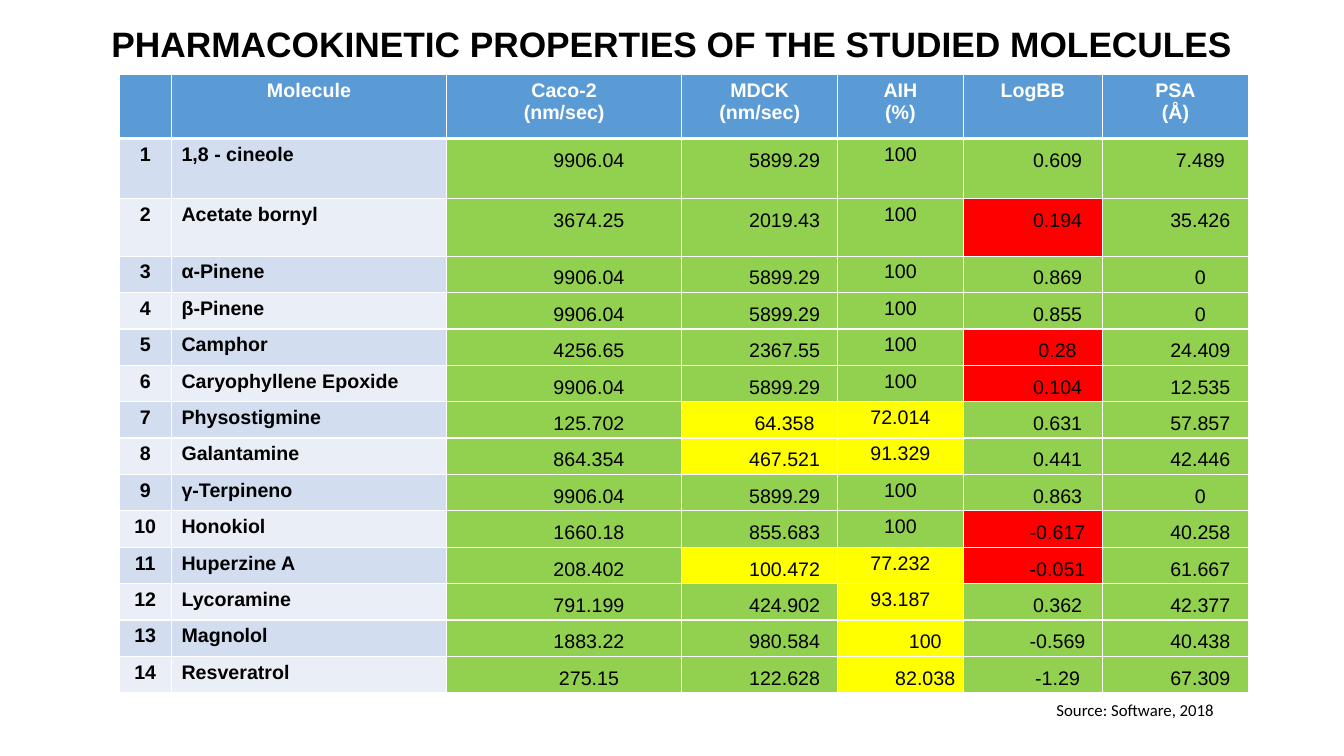
import dataclasses
import itertools

import pptx
import pptx.dml.color
import pptx.enum.text
import pptx.oxml
import pptx.oxml.ns
import pptx.util

ALIGN = pptx.enum.text.PP_ALIGN
PX = pptx.util.Inches(1) // 144


@dataclasses.dataclass(frozen=True)
class Theme:
    font: str = "Arial"
    source_font: str = "Calibri"
    title_size: float = 25.2
    table_size: float = 14
    source_size: float = 12
    ink: str = "000000"
    white: str = "FFFFFF"
    header: str = "5B9BD5"
    bands: tuple = ("D2DEEF", "EAEFF7")
    good: str = "92D050"
    fair: str = "FFFF00"
    poor: str = "FF0000"


THEME = Theme()

COLUMN_WIDTHS = [75, 393, 336, 223, 179, 199, 209]
ROW_HEIGHTS = [91, 86, 82] + [52] * 12
HEADERS = ["", "Molecule", "Caco-2\n(nm/sec)", "MDCK\n(nm/sec)", "AIH\n(%)", "LogBB", "PSA\n(Å)"]
MDCK, AIH, LOGBB = 3, 4, 5
MOLECULES = [
    ("1,8 - cineole", "9906.04", "5899.29", "100", "0.609", "7.489"),
    ("Acetate bornyl", "3674.25", "2019.43", "100", "0.194", "35.426"),
    ("α-Pinene", "9906.04", "5899.29", "100", "0.869", "0"),
    ("β-Pinene", "9906.04", "5899.29", "100", "0.855", "0"),
    ("Camphor", "4256.65", "2367.55", "100", "0.28", "24.409"),
    ("Caryophyllene Epoxide", "9906.04", "5899.29", "100", "0.104", "12.535"),
    ("Physostigmine", "125.702", "64.358", "72.014", "0.631", "57.857"),
    ("Galantamine", "864.354", "467.521", "91.329", "0.441", "42.446"),
    ("γ-Terpineno", "9906.04", "5899.29", "100", "0.863", "0"),
    ("Honokiol", "1660.18", "855.683", "100", "-0.617", "40.258"),
    ("Huperzine A", "208.402", "100.472", "77.232", "-0.051", "61.667"),
    ("Lycoramine", "791.199", "424.902", "93.187", "0.362", "42.377"),
    ("Magnolol", "1883.22", "980.584", "100", "-0.569", "40.438"),
    ("Resveratrol", "275.15", "122.628", "82.038", "-1.29", "67.309"),
]
HIGHLIGHTS = {
    MDCK: (THEME.fair, {7, 8, 11}),
    AIH: (THEME.fair, {7, 8, 11, 12, 13, 14}),
    LOGBB: (THEME.poor, {2, 5, 6, 10, 11}),
}
INDENTED_AIH_ROWS = {13, 14}


def rgb(color):
    return pptx.dml.color.RGBColor.from_string(color)


def write(tf, text, *, size, font=THEME.font, color=THEME.ink, bold=False,
          align=ALIGN.LEFT, spacing=None, after=None, indent=0):
    """Fill a text frame, one paragraph for each line of text."""
    for i, line in enumerate(text.split("\n")):
        p = tf.add_paragraph() if i else tf.paragraphs[0]
        p.alignment = align
        if spacing:
            p.line_spacing = spacing
        if after is not None:
            p.space_after = pptx.util.Pt(after)
        if indent:
            pPr = p._p.get_or_add_pPr()
            pPr.set("marL", "0")
            pPr.set("indent", str(indent * PX))
        r = p.add_run()
        r.text = line
        r.font.name, r.font.size, r.font.bold = font, pptx.util.Pt(size), bold
        r.font.color.rgb = rgb(color)


def set_borders(cell, row):
    """Draw thin white edges, with a thick one under the header."""
    widths = {"lnL": 1, "lnR": 1, "lnT": 3 if row == 1 else 1, "lnB": 3 if row == 0 else 1}
    tcPr = cell._tc.get_or_add_tcPr()
    for i, (side, width) in enumerate(widths.items()):
        tcPr.insert(i, pptx.oxml.parse_xml(
            f'<a:{side} {pptx.oxml.ns.nsdecls("a")} w="{pptx.util.Pt(width)}">'
            f'<a:solidFill><a:srgbClr val="{THEME.white}"/></a:solidFill></a:{side}>'))


def cell_fill(row, col):
    if row == 0:
        return THEME.header
    if col < 2:
        return THEME.bands[(row - 1) % 2]
    color, rows = HIGHLIGHTS.get(col, (THEME.good, set()))
    return color if row in rows else THEME.good


def write_cell(cell, text, row, col):
    style = {"size": THEME.table_size, "bold": row == 0 or col < 2,
             "color": THEME.ink if row else THEME.white,
             "align": ALIGN.LEFT if row and col == 1 else ALIGN.CENTER}
    if row and col > 1 and (col != AIH or row in INDENTED_AIH_ROWS):
        cell.margin_left = cell.margin_right = 10 * PX
        cell.margin_top = cell.margin_bottom = 0
        style.update(spacing=1.5, after=8, indent=71)
    write(cell.text_frame, text, **style)


def add_title(s, x, y, w, h):
    title = s.shapes.title
    title.left, title.top, title.width, title.height = (v * PX for v in (x, y, w, h))
    tf = title.text_frame
    tf.word_wrap = True
    tf.auto_size = pptx.enum.text.MSO_AUTO_SIZE.NONE
    tf.vertical_anchor = pptx.enum.text.MSO_ANCHOR.MIDDLE
    write(tf, "PHARMACOKINETIC PROPERTIES OF THE STUDIED MOLECULES",
          size=THEME.title_size, bold=True, align=ALIGN.CENTER, spacing=0.9)


def add_properties_table(s, x, y):
    rows = [HEADERS] + [(str(n), *values) for n, values in enumerate(MOLECULES, 1)]
    table = s.shapes.add_table(len(rows), len(HEADERS), x * PX, y * PX,
                               sum(COLUMN_WIDTHS) * PX, sum(ROW_HEIGHTS) * PX).table
    for column, width in zip(table.columns, COLUMN_WIDTHS):
        column.width = width * PX
    for table_row, height in zip(table.rows, ROW_HEIGHTS):
        table_row.height = height * PX
    for row, col in itertools.product(range(len(rows)), range(len(HEADERS))):
        cell = table.cell(row, col)
        cell.fill.solid()
        cell.fill.fore_color.rgb = rgb(cell_fill(row, col))
        set_borders(cell, row)
        if rows[row][col]:
            write_cell(cell, rows[row][col], row, col)


def add_source(s, x, y, w, h):
    tf = s.shapes.add_textbox(x * PX, y * PX, w * PX, h * PX).text_frame
    tf.word_wrap = True
    tf.auto_size = pptx.enum.text.MSO_AUTO_SIZE.SHAPE_TO_FIT_TEXT
    write(tf, "Source: Software, 2018", size=THEME.source_size, font=THEME.source_font)


def main():
    prs = pptx.Presentation()
    prs.slide_width, prs.slide_height = 1920 * PX, 1080 * PX
    s = prs.slides.add_slide(prs.slide_layouts[5])
    add_title(s, 132, 20, 1656, 92)
    add_properties_table(s, 170, 107)
    add_source(s, 1495, 992, 402, 43)
    prs.save("out.pptx")


if __name__ == "__main__":
    main()
